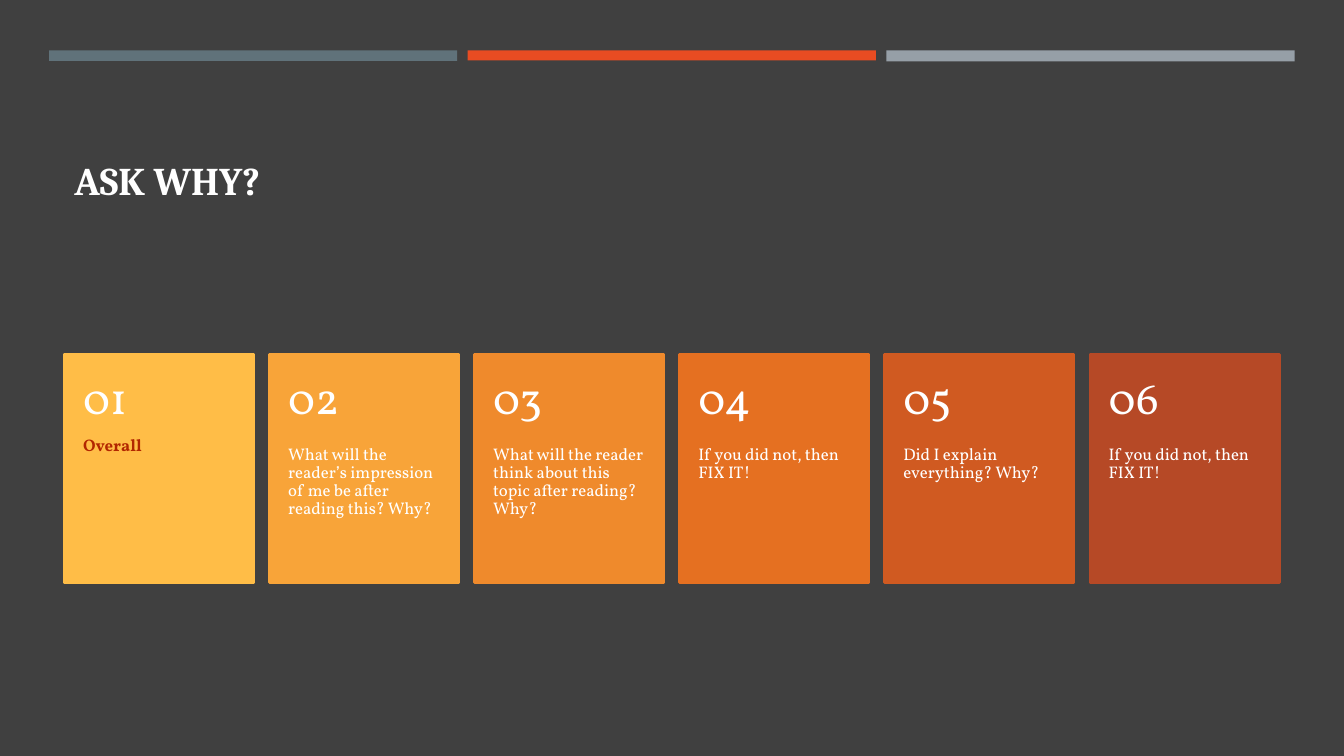
"""Build the "Ask why?" slide with six numbered question cards."""
from pptx import Presentation
from pptx.dml.color import RGBColor
from pptx.enum.shapes import MSO_SHAPE as Shape
from pptx.enum.text import MSO_ANCHOR as Anchor
from pptx.util import Pt

COLORS = {
    "black": "000000", "backdrop": "404040", "white": "FFFFFF", "red": "B22600",
    "slate": "60727A", "orange": "E84C22", "silver": "969FA7",
    "card1": "FFBD47", "card2": "F8A439", "card3": "EF8A2C",
    "card4": "E57021", "card5": "D05A21", "card6": "B64926",
}
TITLE = "ASK WHY?"
BARS = [("slate", 7.5), ("orange", 7.2), ("silver", 7.9)]
CARDS = [
    "Overall",
    "What will the reader’s impression of me be after reading this? Why?",
    "What will the reader think about this topic after reading? Why?",
    "If you did not, then FIX IT!",
    "Did I explain everything? Why?",
    "If you did not, then FIX IT!",
]
TITLE_FONT = {"name": "Cambria", "size": Pt(28), "bold": True}
NUMBER_FONT = {"name": "Vollkorn", "size": Pt(32), "bold": False}
BODY_FONT = {"name": "Vollkorn", "size": Pt(12), "bold": False}
LEAD_FONT = {**BODY_FONT, "bold": True}

WIDTH, HEIGHT = 960, 540
BAR_LEFT, BAR_TOP, BAR_WIDTH, BAR_PITCH = 35, 36, 291.6, 299.1
CARD_LEFT, CARD_TOP, CARD_WIDTH, CARD_HEIGHT = 45.9, 253.2, 135.4, 162.8
CARD_PITCH, NUMBER_HEIGHT = 146.5, 65.1


def color(name):
    """Return the named colour."""
    return RGBColor.from_string(COLORS[name])


def set_values(target, values):
    """Set every attribute in the dict on the target."""
    for name, value in values.items():
        setattr(target, name, value)


def add_block(page, area, fill, line_width=0):
    """Add a plain rectangle, outlined in its own colour if asked."""
    block = page.shapes.add_shape(Shape.RECTANGLE, *map(Pt, area))
    block.shadow.inherit = False
    block.fill.solid()
    block.fill.fore_color.rgb = color(fill)
    if line_width:
        block.line.color.rgb = color(fill)
        block.line.width = Pt(line_width)
    else:
        block.line.fill.background()


def add_text(page, area, text, font, ink, anchor, margins, spacing):
    """Add a wrapped text box with one paragraph."""
    frame = page.shapes.add_textbox(*map(Pt, area)).text_frame
    sides = ("margin_left", "margin_top", "margin_right", "margin_bottom")
    set_values(frame, {"word_wrap": True, "vertical_anchor": anchor})
    set_values(frame, dict(zip(sides, map(Pt, margins))))
    para = frame.paragraphs[0]
    para.line_spacing = spacing
    span = para.add_run()
    span.text = text
    set_values(span.font, font)
    span.font.color.rgb = color(ink)


def main():
    """Lay out the slide and save the deck."""
    deck = Presentation()
    set_values(deck, {"slide_width": Pt(WIDTH), "slide_height": Pt(HEIGHT)})
    page = deck.slides.add_slide(deck.slide_layouts[6])
    page.background.fill.solid()
    page.background.fill.fore_color.rgb = color("black")
    add_block(page, (0, 0, WIDTH, HEIGHT), "backdrop")
    add_text(page, (46, 55.4, 868, 93.6), TITLE, TITLE_FONT, "white",
             Anchor.BOTTOM, (7.2, 3.6, 7.2, 3.6), 0.9)

    for index, (fill, height) in enumerate(BARS):
        left = BAR_LEFT + index * BAR_PITCH
        add_block(page, (left, BAR_TOP, BAR_WIDTH, height), fill)

    for index, text in enumerate(CARDS):
        number = index + 1
        left = CARD_LEFT + index * CARD_PITCH
        font, ink = (BODY_FONT, "white") if index else (LEAD_FONT, "red")
        add_block(page, (left, CARD_TOP, CARD_WIDTH, CARD_HEIGHT), f"card{number}", 1.75)
        add_text(page, (left, CARD_TOP + NUMBER_HEIGHT, CARD_WIDTH, CARD_HEIGHT - NUMBER_HEIGHT),
                 text, font, ink, Anchor.TOP, (13.4, 0, 13.4, 26), 0.9)
        add_text(page, (left, CARD_TOP, CARD_WIDTH, NUMBER_HEIGHT), f"{number:02}",
                 NUMBER_FONT, "white", Anchor.MIDDLE, (13.4, 13, 13.4, 13), 0.9)

    deck.save("out.pptx")


if __name__ == "__main__":
    main()
